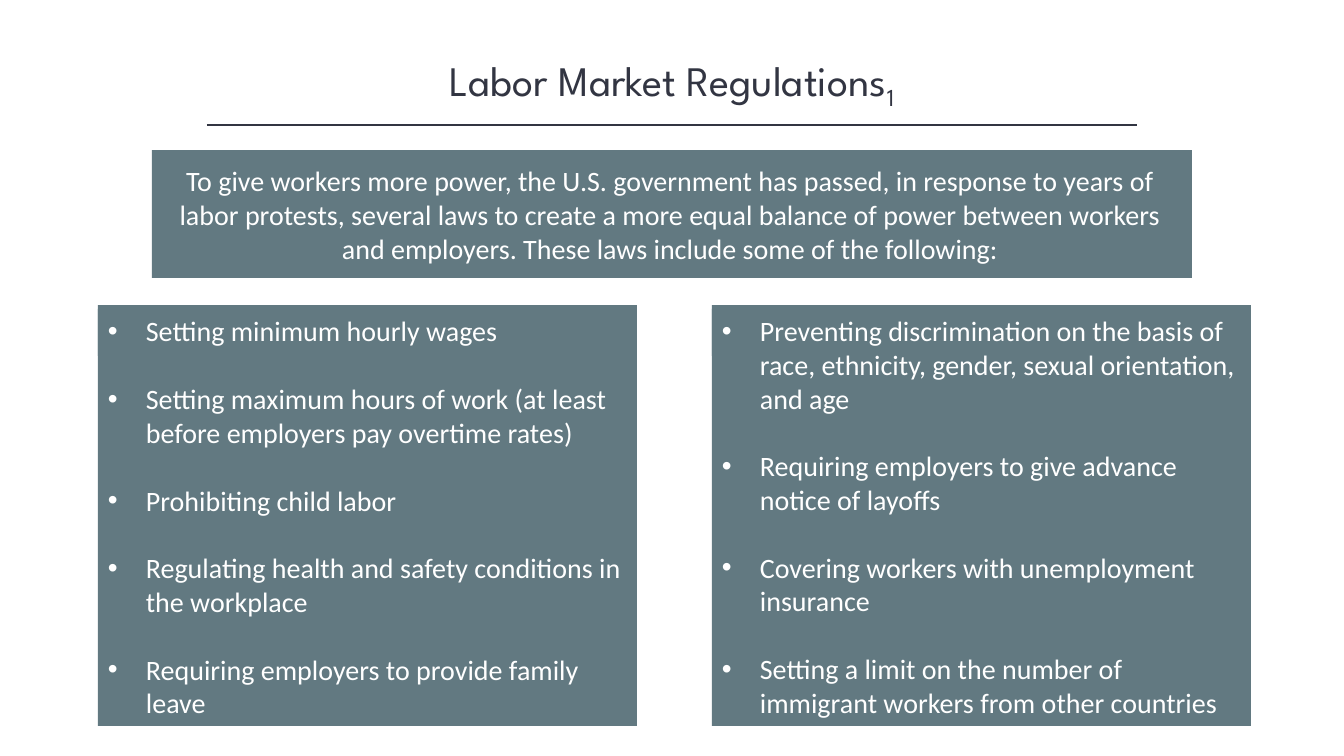
from pptx import Presentation
from pptx import util as u
from pptx.dml.color import RGBColor
from pptx.enum import shapes, text
from lxml import etree

PX = 914400 / 100.8
THEME = {
    "ink": RGBColor.from_string("323542"),
    "panel": RGBColor.from_string("627981"),
    "light": RGBColor.from_string("FFFFFF"),
    "title": {"name": "League Spartan", "size": u.Pt(30)},
    "body": {"name": "Calibri", "size": u.Pt(20)},
    "gap": u.Pt(24.4),
}


def px(*lengths):
    return [u.Emu(round(length * PX)) for length in lengths]


def block(*box):
    rect = slide.shapes.add_shape(shapes.MSO_SHAPE.RECTANGLE, *px(*box))
    rect.shadow.inherit = False
    rect.fill.solid()
    rect.fill.fore_color.rgb = THEME["panel"]
    rect.line.fill.background()
    rect.text_frame.word_wrap = True
    rect.text_frame.vertical_anchor = text.MSO_ANCHOR.TOP
    return rect.text_frame


deck = Presentation()
deck.slide_width, deck.slide_height = px(1344, 756)
slide = deck.slides.add_slide(deck.slide_layouts[6])

# Title with its subscript number
heading = slide.shapes.add_textbox(*px(168, 52, 1008, 62)).text_frame
heading.word_wrap = True
heading.vertical_anchor = text.MSO_ANCHOR.MIDDLE
title = heading.paragraphs[0]
title.alignment = text.PP_ALIGN.CENTER
for words in ("Labor Market Regulations", "1"):
    part = title.add_run()
    part.text = words
    part.font.color.rgb = THEME["ink"]
    for key, value in THEME["title"].items():
        setattr(part.font, key, value)
part.font._element.set("baseline", "-25000")

# Rule under the title
rule = slide.shapes.add_connector(shapes.MSO_CONNECTOR.STRAIGHT, *px(207, 125, 1137, 125))
rule.line.color.rgb = THEME["ink"]
rule.line.width = u.Pt(1)
etree.SubElement(
    rule._element.spPr, "{http://schemas.openxmlformats.org/drawingml/2006/main}effectLst"
)

# Introduction on its banner
block(152, 150, 1040, 128)
intro = block(166, 159, 1008, 112).paragraphs[0]
intro.text = (
    "To give workers more power, the U.S. government has passed, in response to years of "
    "labor protests, several laws to create a more equal balance of power between workers "
    "and employers. These laws include some of the following:"
)
intro.alignment = text.PP_ALIGN.CENTER
intro.font.color.rgb = THEME["light"]
for key, value in THEME["body"].items():
    setattr(intro.font, key, value)

# Two columns of laws
LAWS = {
    98: [
        "Setting minimum hourly wages",
        "Setting maximum hours of work (at least before employers pay overtime rates)",
        "Prohibiting child labor",
        "Regulating health and safety conditions in the workplace",
        "Requiring employers to provide family leave",
    ],
    712: [
        "Preventing discrimination on the basis of race, ethnicity, gender, sexual "
        "orientation, and age",
        "Requiring employers to give advance notice of layoffs",
        "Covering workers with unemployment insurance",
        "Setting a limit on the number of immigrant workers from other countries",
    ],
}
for left, laws in LAWS.items():
    block(left, 305, 539, 51)
    column = block(left, 309, 539, 417)
    for number, wording in enumerate(laws):
        law = column.add_paragraph() if number else column.paragraphs[0]
        law.text = wording
        law.alignment = text.PP_ALIGN.LEFT
        if number:
            law.space_before = THEME["gap"]
        props = law._p.get_or_add_pPr()
        indent = px(38)[0]
        props.set("marL", str(indent))
        props.set("indent", str(-indent))
        for tag, attribute, value in (("buFont", "typeface", "Arial"), ("buChar", "char", "•")):
            etree.SubElement(
                props, "{http://schemas.openxmlformats.org/drawingml/2006/main}" + tag
            ).set(attribute, value)
        law.font.color.rgb = THEME["light"]
        for key, value in THEME["body"].items():
            setattr(law.font, key, value)

deck.save("out.pptx")
